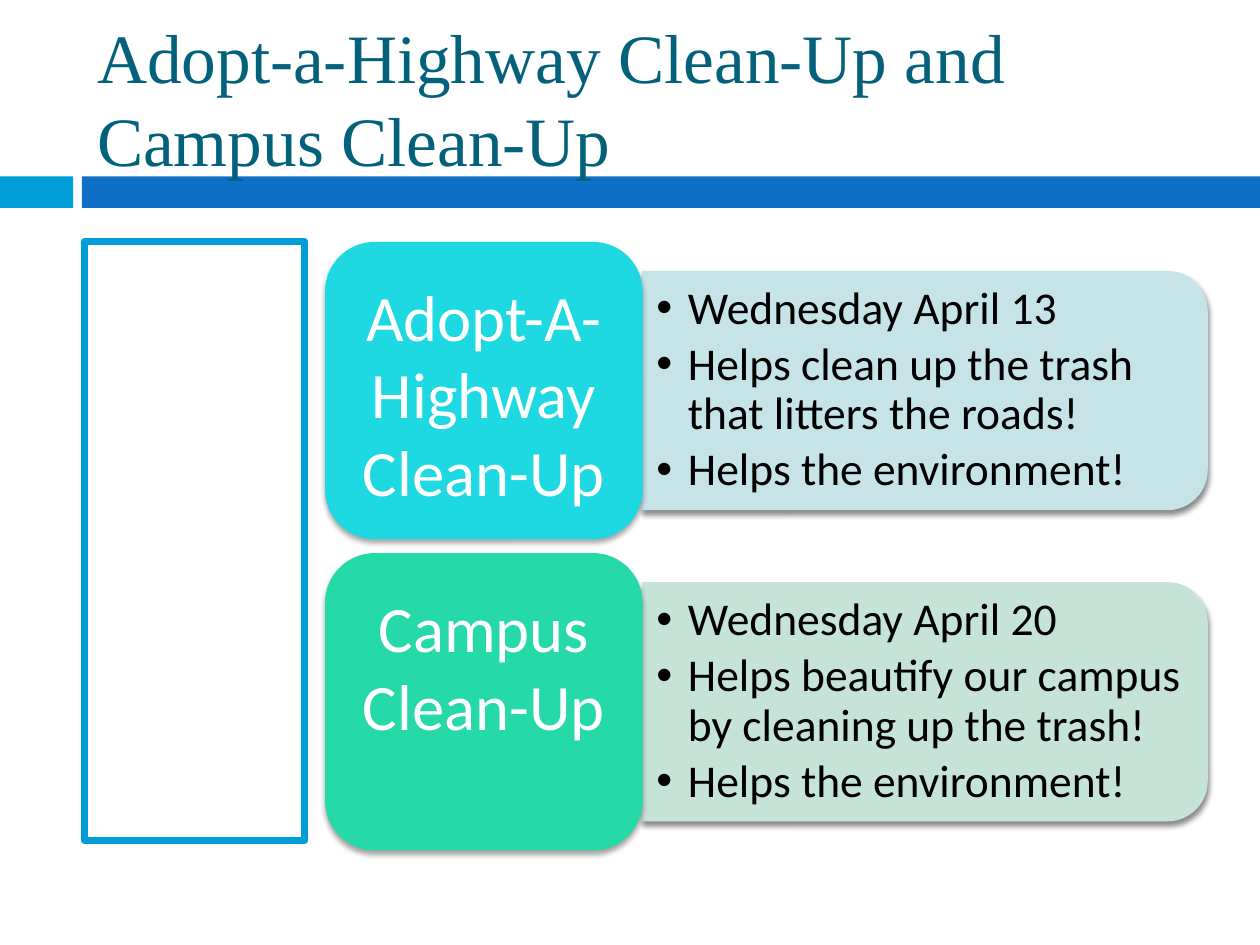
from lxml import etree
from pptx import Presentation
from pptx.dml.color import RGBColor
from pptx.enum.shapes import MSO_SHAPE as SHAPE
from pptx.enum.text import MSO_ANCHOR as ANCHOR, PP_ALIGN as ALIGN
from pptx.oxml import parse_xml
from pptx.oxml.ns import nsdecls, qn
from pptx.util import Inches, Pt

CARDS = [
    ("Adopt-A-Highway Clean-Up", "1FD9E2", "C6E3E8",
     ["Wednesday April 13",
      "Helps clean up the trash that litters the roads!",
      "Helps the environment!"]),
    ("Campus Clean-Up", "25D9A8", "C6E3D7",
     ["Wednesday April 20",
      "Helps beautify our campus by cleaning up the trash!",
      "Helps the environment!"]),
]


def rgb(value):
    return RGBColor.from_string(value)


def add_box(s, kind, box, fill, line=None, width=0):
    sp = s.shapes.add_shape(kind, *map(Inches, box))
    sp.shadow.inherit = False
    sp.fill.solid()
    sp.fill.fore_color.rgb = rgb(fill)
    if line:
        sp.line.color.rgb = rgb(line)
        sp.line.width = Pt(width)
    else:
        sp.line.fill.background()
    return sp


def add_shadow(sp, alpha, dist, direction):
    effects = sp._element.spPr.find(qn("a:effectLst"))
    effects.append(parse_xml(
        f'<a:outerShdw {nsdecls("a")} blurRad="{Pt(3)}" dist="{Pt(dist)}" '
        f'dir="{direction * 60000}" rotWithShape="0"><a:srgbClr val="000000">'
        f'<a:alpha val="{alpha * 1000}"/></a:srgbClr></a:outerShdw>'))


def style(p, size, font, color):
    for r in p.runs:
        r.font.size = Pt(size)
        r.font.name = font
        r.font.color.rgb = rgb(color)


def set_frame(tf, anchor, side, top):
    tf.word_wrap = True
    tf.vertical_anchor = anchor
    tf.margin_left = tf.margin_right = Inches(side)
    tf.margin_top = tf.margin_bottom = Inches(top)


def add_bullet(p):
    pPr = p._p.get_or_add_pPr()
    pPr.set("marL", str(Inches(0.25)))
    pPr.set("indent", str(-Inches(0.25)))
    etree.SubElement(pPr, qn("a:buFont")).set("typeface", "Arial")
    etree.SubElement(pPr, qn("a:buChar")).set("char", "•")


def add_header(s, box):
    x, y, w, h = box
    add_box(s, SHAPE.RECTANGLE, (x, y, 0.58, h), "009DD9")
    add_box(s, SHAPE.RECTANGLE, (x + 0.65, y, w - 0.65, h), "0F6FC6")
    title = s.shapes.title
    title.left, title.top, title.width, title.height = map(
        Inches, (x + 0.67, 0.3, 8.83, 0.95))
    s.shapes._spTree.append(title._element)
    tf = title.text_frame
    tf.text = "Adopt-a-Highway Clean-Up and Campus Clean-Up"
    set_frame(tf, ANCHOR.MIDDLE, 0.1, 0.05)
    tf.paragraphs[0].alignment = ALIGN.LEFT
    style(tf.paragraphs[0], 39.6, "Times New Roman", "04617B")


def add_card(s, box, heading, fill, tint, items):
    x, y, w, h = box
    head_w = w * 0.36
    panel_w, panel_h = w - head_w, h * 0.8
    cx, cy = x + head_w + panel_w / 2, y + h / 2
    panel = add_box(s, SHAPE.ROUND_2_SAME_RECTANGLE,
                    (cx - panel_h / 2, cy - panel_w / 2, panel_h, panel_w),
                    tint, tint, 0.79)
    panel.rotation = 90
    add_shadow(panel, 45, 2.4, 90)

    text_h = panel_h * 0.9
    tb = s.shapes.add_textbox(*map(Inches, (
        x + head_w, cy - text_h / 2, panel_w - 0.09, text_h)))
    tf = tb.text_frame
    tf.text = "\n".join(items)
    set_frame(tf, ANCHOR.MIDDLE, 0.11, 0.05)
    for p in tf.paragraphs:
        p.line_spacing = 0.9
        p.space_after = Pt(4)
        add_bullet(p)
        style(p, 26, "Calibri", "000000")

    head = add_box(s, SHAPE.ROUNDED_RECTANGLE, (x, y, head_w, h), fill)
    add_shadow(head, 35, 2, 90)
    tf = head.text_frame
    tf.text = heading
    set_frame(tf, ANCHOR.TOP, 0.15, 0.16)
    tf.paragraphs[0].alignment = ALIGN.CENTER
    style(tf.paragraphs[0], 37, "Calibri", "FFFFFF")


def add_cards(s, box):
    x, y, w, h = box
    gap = 0.11
    card_h = (h - gap * (len(CARDS) - 1)) / len(CARDS)
    for i, card in enumerate(CARDS):
        add_card(s, (x, y + i * (card_h + gap), w, card_h), *card)


def main():
    prs = Presentation()
    prs.slide_width, prs.slide_height = Inches(10), Inches(7.5)
    s = prs.slides.add_slide(prs.slide_layouts[5])
    add_header(s, (0, 1.4, 10, 0.25))
    add_box(s, SHAPE.RECTANGLE, (0.67, 1.92, 1.75, 4.75), "FFFFFF", "009DD9", 4)
    add_cards(s, (2.58, 1.92, 7, 4.83))
    prs.save("out.pptx")


if __name__ == "__main__":
    main()
